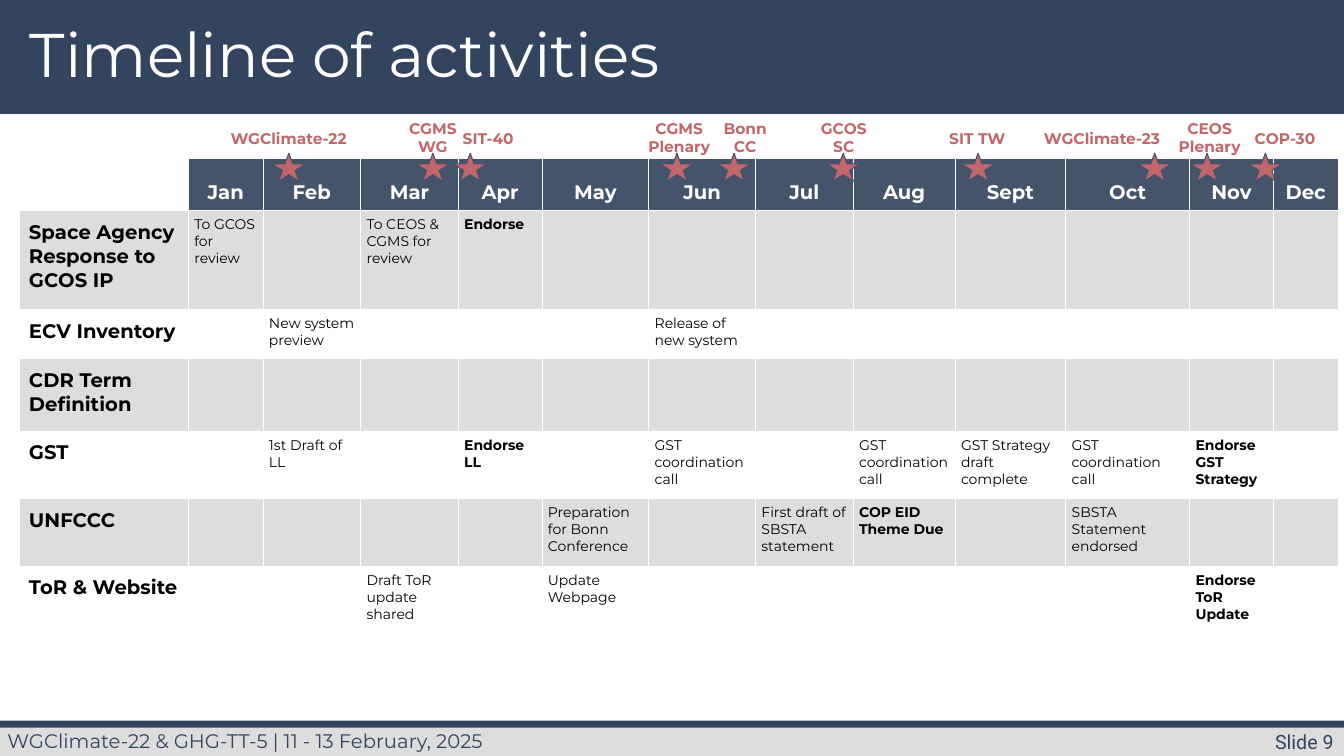
from lxml.etree import SubElement
from pptx import Presentation
from pptx.dml.color import RGBColor
from pptx.enum.shapes import MSO_SHAPE
from pptx.enum.text import MSO_ANCHOR, MSO_AUTO_SIZE, PP_ALIGN
from pptx.oxml import parse_xml
from pptx.oxml.ns import nsdecls, qn
from pptx.util import Cm, Pt

NAVY, SLATE, GREY, ROSE, WHITE, BLACK = (
    "33445F", "44546A", "DDDDDD", "C1666B", "FFFFFF", "000000")
FONT = "Montserrat"
MONTHS = ["Jan", "Feb", "Mar", "Apr", "May", "Jun", "Jul", "Aug", "Sept", "Oct", "Nov", "Dec"]
COLUMN_WIDTHS = [4.27, 1.88, 2.46, 2.46, 2.11, 2.69, 2.69, 2.46, 2.57, 2.79, 3.12, 2.11, 1.63]
ROW_HEIGHTS = [1.19, 2.49, 1.24, 1.83, 1.7, 1.7, 1.78]
ACTIVITIES = {
    "Space Agency Response to GCOS IP": {
        "Jan": "To GCOS for review", "Mar": "To CEOS & CGMS for review", "Apr": "Endorse"},
    "ECV Inventory": {"Feb": "New system preview", "Jun": "Release of new system"},
    "CDR Term Definition": {},
    "GST": {
        "Feb": "1st Draft of LL", "Apr": "Endorse LL", "Jun": "GST coordination call",
        "Aug": "GST coordination call", "Sept": "GST Strategy draft complete",
        "Oct": "GST coordination call", "Nov": "Endorse GST Strategy"},
    "UNFCCC": {
        "May": "Preparation for Bonn Conference", "Jul": "First draft of SBSTA statement",
        "Aug": "COP EID Theme Due", "Oct": "SBSTA Statement endorsed"},
    "ToR & Website": {
        "Mar": "Draft ToR update shared", "May": "Update Webpage", "Nov": "Endorse ToR Update"},
}
BOLD_STARTS = ("Endorse", "COP EID")
ONE_LINE, TWO_LINES = (3.02, 0.99), (2.74, 1.45)
MILESTONES = [
    ("WGClimate-22", 5.46, 3.63, ONE_LINE, 6.86),
    ("CGMS WG", 9.88, 2.06, TWO_LINES, 10.49),
    ("SIT-40", 10.49, 3.63, ONE_LINE, 11.43),
    ("CGMS Plenary", 15.75, 2.74, TWO_LINES, 16.64),
    ("Bonn CC", 17.75, 2.06, TWO_LINES, 18.08),
    ("GCOS SC", 20.12, 2.29, TWO_LINES, 20.83),
    ("SIT TW", 23.6, 2.06, ONE_LINE, 24.23),
    ("WGClimate-23", 25.96, 3.63, ONE_LINE, 28.68),
    ("CEOS Plenary", 29.34, 2.29, TWO_LINES, 30),
    ("COP-30", 31.24, 2.29, ONE_LINE, 31.47),
]


def colour(value):
    """Turn a hex string into a colour."""
    return RGBColor.from_string(value)


def format_para(para, size, shade, bold=False, align=PP_ALIGN.LEFT, font=FONT):
    """Format a paragraph and its runs."""
    para.alignment = align
    for span in para.runs:
        span.font.name = font
        span.font.size = Pt(size)
        span.font.bold = bold
        span.font.color.rgb = colour(shade)


def set_margins(target, side, top, bottom):
    """Set the inner margins of a cell or text frame."""
    target.margin_left = target.margin_right = Cm(side)
    target.margin_top = Cm(top)
    target.margin_bottom = Cm(bottom)


def add_shape(page, kind, left, top, width, height, fill, line=None):
    """Add a filled preset shape."""
    shape = page.shapes.add_shape(kind, Cm(left), Cm(top), Cm(width), Cm(height))
    shape.shadow.inherit = False
    shape.fill.solid()
    shape.fill.fore_color.rgb = colour(fill)
    if line:
        shape.line.color.rgb = colour(line)
        shape.line.width = Pt(0.75)
    else:
        shape.line.fill.background()


def add_text(page, text, left, top, width, height, margin, **style):
    """Add a wrapped text box with one formatted paragraph."""
    box = page.shapes.add_textbox(Cm(left), Cm(top), Cm(width), Cm(height))
    frame = box.text_frame
    frame.word_wrap = True
    set_margins(frame, 0.25, margin, margin)
    frame.text = text
    format_para(frame.paragraphs[0], **style)


def add_title(page, text):
    """Place and format the title in front of the header bar."""
    title = page.shapes.title
    title.left, title.top, title.width, title.height = Cm(0.5), Cm(0.37), Cm(26.09), Cm(2.16)
    frame = title.text_frame
    frame.text = text
    frame.auto_size = MSO_AUTO_SIZE.NONE
    frame.vertical_anchor = MSO_ANCHOR.MIDDLE
    set_margins(frame, 0.25, 0.13, 0.13)
    frame.paragraphs[0].line_spacing = 0.9
    format_para(frame.paragraphs[0], 44, WHITE)
    element = title._element
    element.getparent().append(element)


def add_borders(cell):
    """Draw thin white borders around a cell."""
    properties = cell._tc.get_or_add_tcPr()
    for index, side in enumerate(("lnL", "lnR", "lnT", "lnB")):
        border = parse_xml(f'<a:{side} {nsdecls("a")} w="{Pt(0.75)}"/>')
        fill = SubElement(border, qn("a:solidFill"))
        SubElement(fill, qn("a:srgbClr"), val=WHITE)
        properties.insert(index, border)


def fill_cell(cell, text, fill, side, top, **style):
    """Set the text, margins, fill and borders of a cell."""
    cell.text = text
    set_margins(cell, side, top, side)
    format_para(cell.text_frame.paragraphs[0], **style)
    add_borders(cell)
    if fill:
        cell.fill.solid()
        cell.fill.fore_color.rgb = colour(fill)
    else:
        cell.fill.background()


def add_schedule(page):
    """Add the table of activities by month."""
    frame = page.shapes.add_table(
        len(ROW_HEIGHTS), len(COLUMN_WIDTHS), Cm(0.48), Cm(3.99),
        Cm(sum(COLUMN_WIDTHS)), Cm(sum(ROW_HEIGHTS)))
    table = frame.table
    table.first_row = table.horz_banding = False
    for column, width in zip(table.columns, COLUMN_WIDTHS):
        column.width = Cm(width)
    for row, height in zip(table.rows, ROW_HEIGHTS):
        row.height = Cm(height)
    fill_cell(table.cell(0, 0), "", None, 0.15, 0.15, size=14, shade=BLACK)
    for column, month in enumerate(MONTHS, 1):
        fill_cell(table.cell(0, column), month, SLATE, 0.15, 0.56,
                  size=14, shade=WHITE, bold=True, align=PP_ALIGN.CENTER)
    for row, (activity, steps) in enumerate(ACTIVITIES.items(), 1):
        fill = GREY if row % 2 else None
        fill_cell(table.cell(row, 0), activity, fill, 0.25, 0.25,
                  size=14, shade=BLACK, bold=True)
        for column, month in enumerate(MONTHS, 1):
            step = steps.get(month, "")
            fill_cell(table.cell(row, column), step, fill, 0.15, 0.15,
                      size=10, shade=BLACK, bold=step.startswith(BOLD_STARTS))


def add_milestone(page, text, left, width, lines, star_left):
    """Add a meeting label and its star."""
    top, height = lines
    add_shape(page, MSO_SHAPE.STAR_5_POINT, star_left, 3.86, 0.84, 0.71, ROSE, SLATE)
    add_text(page, text, left, top, width, height, 0.25,
             size=11, shade=ROSE, bold=True, align=PP_ALIGN.CENTER)


def add_frame(page):
    """Add the header and footer bars with the footer texts."""
    for top, height, fill in ((0, 2.87, NAVY), (18.26, 0.79, GREY), (18.16, 0.18, NAVY)):
        add_shape(page, MSO_SHAPE.RECTANGLE, 0, top, 33.87, height, fill)
    add_text(page, "Slide 9", 28.5, 18.26, 5.36, 0.86, 0.13,
             size=14, shade=NAVY, align=PP_ALIGN.RIGHT, font="Roboto")
    add_text(page, "WGClimate-22 & GHG-TT-5 | 11 - 13 February, 2025",
             -0.06, 18.24, 16.33, 0.86, 0.13, size=14, shade=NAVY)


def main():
    """Build the timeline slide and save it."""
    deck = Presentation()
    deck.slide_width, deck.slide_height = Cm(33.87), Cm(19.05)
    page = deck.slides.add_slide(deck.slide_layouts[5])
    add_frame(page)
    add_title(page, "Timeline of activities")
    add_schedule(page)
    for milestone in MILESTONES:
        add_milestone(page, *milestone)
    deck.save("out.pptx")


if __name__ == "__main__":
    main()
